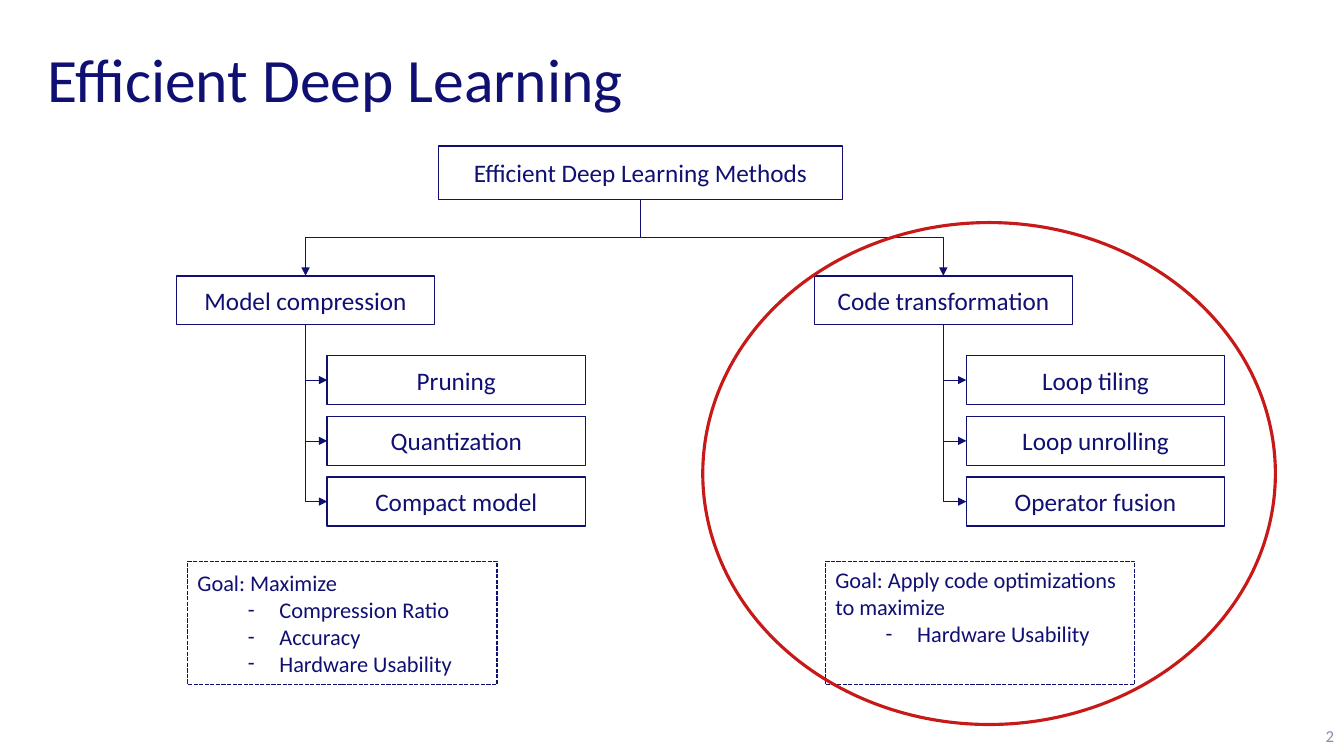
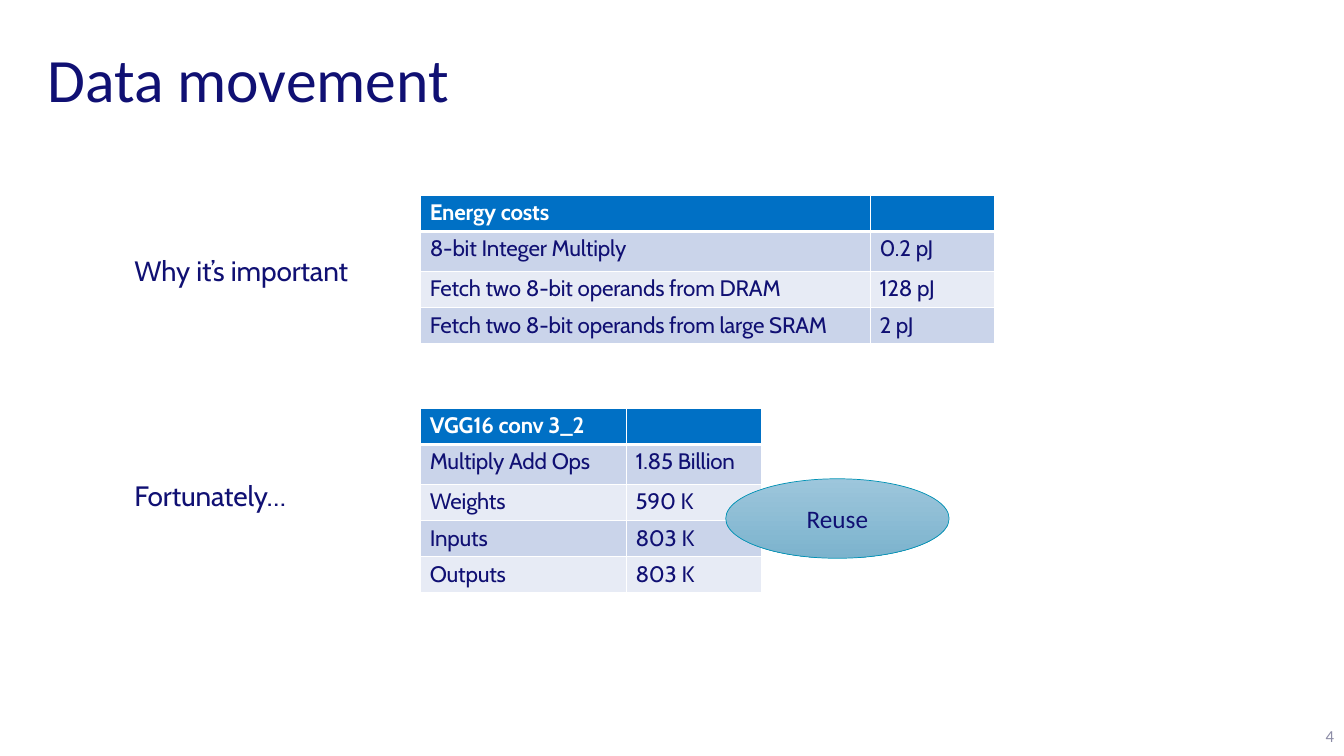
from dataclasses import dataclass

from lxml.etree import SubElement
from pptx import Presentation
from pptx.dml.color import RGBColor
from pptx.enum.dml import MSO_LINE
from pptx.enum.shapes import MSO_CONNECTOR, MSO_SHAPE
from pptx.enum.text import MSO_ANCHOR, PP_ALIGN
from pptx.oxml.ns import qn
from pptx.shapes.autoshape import Shape
from pptx.slide import Slide
from pptx.text.text import _Paragraph as Para
from pptx.util import Pt


@dataclass(frozen=True)
class Theme:
    navy: str = "101073"
    white: str = "FFFFFF"
    gray: str = "8C8CA6"
    red: str = "C81919"
    head: str = "0070C5"
    bands: tuple[str, str] = ("CAD4EA", "E7EBF5")
    glow: tuple[str, str] = ("9DC6DC", "7CB3CD")
    teal: str = "0092B5"
    sans: str = "Calibri"
    soft: str = "Cabin"
    title: float = 44
    label: float = 20
    node: float = 18
    body: float = 16
    foot: float = 12


THEME = Theme()


@dataclass(frozen=True)
class Box:
    left: float
    top: float
    width: float
    height: float

    def place(self) -> tuple[Pt, Pt, Pt, Pt]:
        return Pt(self.left), Pt(self.top), Pt(self.width), Pt(self.height)


@dataclass(frozen=True)
class Branch:
    left: float
    inset: float
    name: str
    leaves: tuple[str, ...]
    goal: str
    aims: tuple[str, ...]
    anchor: MSO_ANCHOR


@dataclass(frozen=True)
class Grid:
    top: float
    widths: tuple[float, float]
    rows: tuple[tuple[str, str], ...]


@dataclass(frozen=True)
class Label:
    top: float
    width: float
    text: str


BRANCHES = (
    Branch(126, 107.7, "Model compression", ("Pruning", "Quantization", "Compact model"),
           "Goal: Maximize", ("Compression Ratio", "Accuracy", "Hardware Usability"),
           MSO_ANCHOR.MIDDLE),
    Branch(581.6, 108.7, "Code transformation",
           ("Loop tiling", "Loop unrolling", "Operator fusion"),
           "Goal: Apply code optimizations to maximize", ("Hardware Usability",),
           MSO_ANCHOR.TOP),
)

GRIDS = (
    Grid(291.7, (147, 96.5), (
        ("VGG16 conv 3_2", ""), ("Multiply Add Ops", "1.85 Billion"),
        ("Weights", "590 K"), ("Inputs", "803 K"), ("Outputs", "803 K"))),
    Grid(139.6, (321.3, 88.7), (
        ("Energy costs", ""), ("8-bit Integer Multiply", "0.2 pJ"),
        ("Fetch two 8-bit operands from DRAM", "128 pJ"),
        ("Fetch two 8-bit operands from large SRAM", "2 pJ"))),
)

LABELS = (Label(180, 170.5, "Why it’s important"), Label(340.5, 121, "Fortunately…"))


def color(code: str) -> RGBColor:
    return RGBColor.from_string(code)


def style(para: Para, size: float, ink: str = THEME.navy, face: str = THEME.sans,
          bold: bool = False, align: PP_ALIGN = PP_ALIGN.LEFT) -> None:
    para.alignment = align
    font = para.font
    font.size, font.name, font.bold = Pt(size), face, bold
    font.color.rgb = color(ink)
    if face == THEME.soft:
        font._rPr.set("spc", "-10")


def add_text(slide: Slide, box: Box, text: str) -> Shape:
    shape = slide.shapes.add_textbox(*box.place())
    shape.text_frame.word_wrap = True
    shape.text_frame.text = text
    return shape


def start(deck: Presentation, text: str, number: int) -> Slide:
    slide = deck.slides.add_slide(deck.slide_layouts[5])
    title = slide.shapes.title
    title.left, title.top, title.width, title.height = Box(26.6, 29, 907, 60).place()
    title.text = text
    title.text_frame.vertical_anchor = MSO_ANCHOR.MIDDLE
    para = title.text_frame.paragraphs[0]
    para.line_spacing = 0.9
    style(para, THEME.title)
    foot = add_text(slide, Box(911, 511, 49, 29), str(number))
    foot.text_frame.vertical_anchor = MSO_ANCHOR.MIDDLE
    style(foot.text_frame.paragraphs[0], THEME.foot, THEME.gray, align=PP_ALIGN.RIGHT)
    return slide


def add_shape(slide: Slide, kind: MSO_SHAPE, box: Box, line: str, weight: float) -> Shape:
    shape = slide.shapes.add_shape(kind, *box.place())
    shape.shadow.inherit = False
    shape.line.color.rgb = color(line)
    shape.line.width = Pt(weight)
    return shape


def add_rect(slide: Slide, box: Box) -> Shape:
    shape = add_shape(slide, MSO_SHAPE.RECTANGLE, box, THEME.navy, 1)
    shape.fill.solid()
    shape.fill.fore_color.rgb = color(THEME.white)
    return shape


def write(shape: Shape, text: str) -> None:
    shape.text_frame.text = text
    shape.text_frame.vertical_anchor = MSO_ANCHOR.MIDDLE
    style(shape.text_frame.paragraphs[0], THEME.node, align=PP_ALIGN.CENTER)


def add_node(slide: Slide, box: Box, text: str) -> None:
    write(add_rect(slide, box), text)


def add_elbow(slide: Slide, x: float, y: float, to_x: float, to_y: float,
              preset: str) -> None:
    wide, high = to_y - y, abs(to_x - x)
    left, top = (x + to_x - wide) / 2, (y + to_y - high) / 2
    elbow = slide.shapes.add_connector(
        MSO_CONNECTOR.ELBOW, Pt(left), Pt(top), Pt(left + wide), Pt(top + high))
    elbow.line.color.rgb = color(THEME.navy)
    elbow.line.width = Pt(0.5)
    SubElement(elbow.line._get_or_add_ln(), qn("a:tailEnd"), type="triangle")
    props = elbow._element.spPr
    SubElement(props, qn("a:effectLst"))
    props.find(qn("a:prstGeom")).set("prst", preset)
    right = to_x > x
    frame = props.find(qn("a:xfrm"))
    frame.set("rot", str((270 if right else 90) * 60000))
    if right:
        frame.set("flipH", "1")


def add_goal(slide: Slide, branch: Branch) -> None:
    shape = add_rect(slide, Box(branch.left + 8, 401, 221, 88))
    shape.line.dash_style = MSO_LINE.SQUARE_DOT
    frame = shape.text_frame
    frame.vertical_anchor = branch.anchor
    frame.text = branch.goal
    style(frame.paragraphs[0], THEME.body)
    for aim in branch.aims:
        para = frame.add_paragraph()
        para.text, para.level = aim, 1
        style(para, THEME.body)
        props = para._p.get_or_add_pPr()
        props.set("marL", str(Pt(58.5)))
        props.set("indent", str(Pt(-22.5)))
        props.insert(0, props.makeelement(qn("a:buFont"), {"typeface": THEME.sans}))
        props.insert(1, props.makeelement(qn("a:buChar"), {"char": "-"}))


def add_branch(slide: Slide, branch: Branch, x: float, y: float) -> None:
    head = Box(branch.left, 197, 184.5, 35)
    add_node(slide, head, branch.name)
    mid, base = head.left + head.width / 2, head.top + head.height
    add_elbow(slide, x, y, mid, head.top, "bentConnector3")
    for row, name in enumerate(branch.leaves):
        box = Box(head.left + branch.inset, 254 + 43.4 * row, head.width, head.height)
        add_node(slide, box, name)
        add_elbow(slide, mid, base, box.left, box.top + box.height / 2, "bentConnector2")
    add_goal(slide, branch)


def add_tree(slide: Slide) -> None:
    root = Box(313, 104.2, 289, 38.3)
    add_node(slide, root, "Efficient Deep Learning Methods")
    for branch in BRANCHES:
        add_branch(slide, branch, root.left + root.width / 2, root.top + root.height)
    ring = add_shape(slide, MSO_SHAPE.OVAL, Box(502, 159, 409, 358.5), THEME.red, 2.25)
    ring.fill.background()


def add_grid(slide: Slide, grid: Grid) -> None:
    heights = [25.8, 28.5] + [25.9] * (len(grid.rows) - 2)
    box = Box(300.5, grid.top, sum(grid.widths), sum(heights))
    table = slide.shapes.add_table(len(grid.rows), len(grid.widths), *box.place()).table
    for column, width in zip(table.columns, grid.widths):
        column.width = Pt(width)
    for row, texts in enumerate(grid.rows):
        table.rows[row].height = Pt(heights[row])
        first = row == 0
        fill = THEME.head if first else THEME.bands[(row - 1) % 2]
        for col, text in enumerate(texts):
            cell = table.cell(row, col)
            cell.margin_left, cell.margin_top = Pt(6.5), Pt(2.8)
            cell.margin_right = cell.margin_bottom = 0
            cell.text = text
            para = cell.text_frame.paragraphs[0]
            para.space_before = Pt(2.8)
            style(para, THEME.body, THEME.white if first else THEME.navy, THEME.soft, first)
            props = cell._tc.get_or_add_tcPr()
            for side in "LRTB":
                thick = (side == "B" and first) or (side == "T" and row == 1)
                edge = SubElement(props, qn(f"a:ln{side}"), w=str(Pt(3 if thick else 1)))
                paint = SubElement(edge, qn("a:solidFill"))
                SubElement(paint, qn("a:srgbClr"), val=THEME.white)
            cell.fill.solid()
            cell.fill.fore_color.rgb = color(fill)


def add_label(slide: Slide, label: Label) -> None:
    shape = add_text(slide, Box(95, label.top, label.width, 26), label.text)
    frame = shape.text_frame
    frame.margin_left = frame.margin_top = frame.margin_right = frame.margin_bottom = Pt(1)
    style(frame.paragraphs[0], THEME.label, face=THEME.soft)


def add_reuse(slide: Slide) -> None:
    oval = add_shape(slide, MSO_SHAPE.OVAL, Box(518.4, 342, 159.6, 56.8), THEME.teal, 0.5)
    oval.fill.gradient()
    oval.fill.gradient_angle = 270
    for stop, code in zip(oval.fill.gradient_stops, THEME.glow):
        stop.color.rgb = color(code)
    write(oval, "Reuse")


def main() -> None:
    deck = Presentation()
    deck.slide_width, deck.slide_height = Pt(960), Pt(540)
    add_tree(start(deck, "Efficient Deep Learning", 2))
    slide = start(deck, "Data movement", 4)
    for grid in GRIDS:
        add_grid(slide, grid)
    for label in LABELS:
        add_label(slide, label)
    add_reuse(slide)
    deck.save("out.pptx")


if __name__ == "__main__":
    main()
